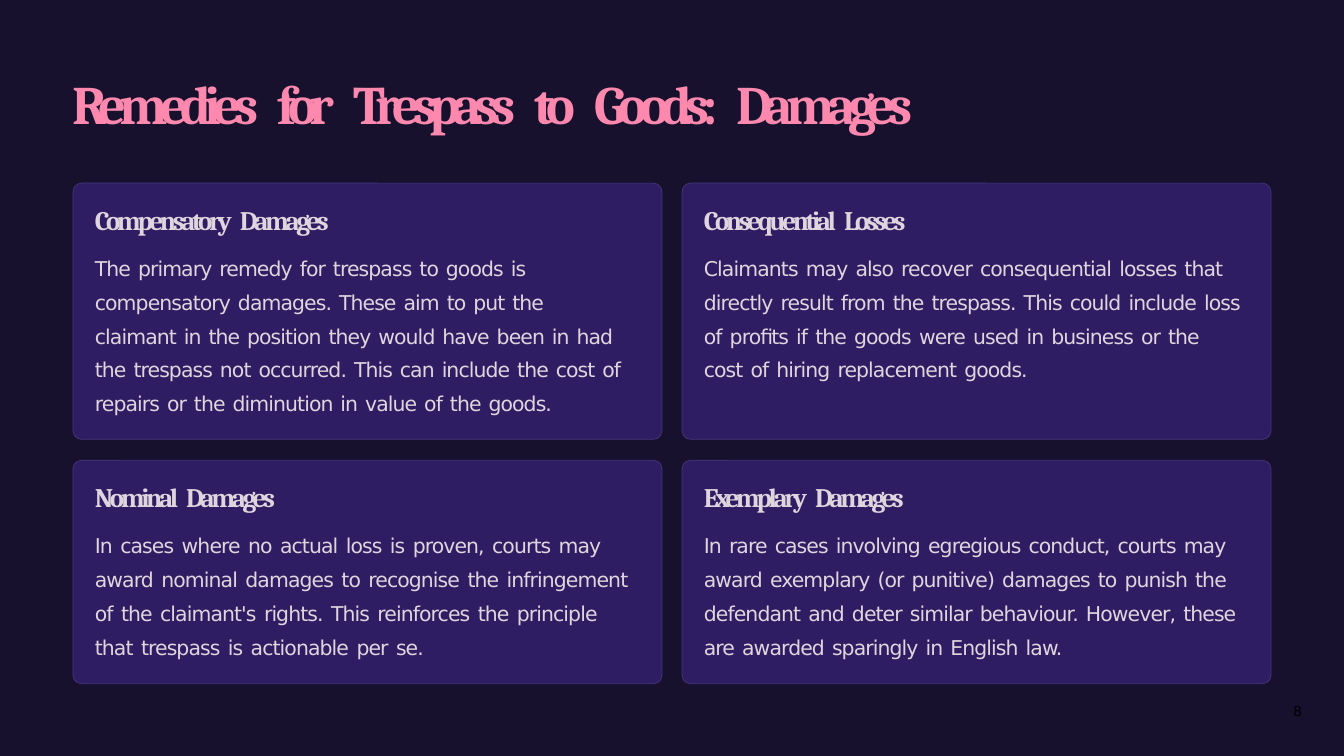
import dataclasses
import itertools

import pptx
import pptx.dml.color
import pptx.enum.shapes
import pptx.enum.text
import pptx.util

Inches = pptx.util.Inches
Pt = pptx.util.Pt
MSO_SHAPE = pptx.enum.shapes.MSO_SHAPE


@dataclasses.dataclass(frozen=True)
class Theme:
    background: str = "17112E"
    title: str = "FF89AE"
    card: str = "2E1D62"
    border: str = "47367B"
    text: str = "DFD5DE"
    number: str = "000000"
    serif: str = "Cambria"
    sans: str = "DejaVu Sans"
    title_size: float = 46.5
    heading_size: float = 23
    body_size: float = 17.5
    number_size: float = 12


THEME = Theme()

# Slide and card grid, in inches
SLIDE_WIDTH, SLIDE_HEIGHT = 16, 9
COLUMN_LEFTS = (0.87, 8.12)
ROWS = ((2.18, 3.05), (5.48, 2.66))  # top, height
CARD_WIDTH = 7.01
CORNER_RADIUS = 0.1
TEXT_WIDTH = 6.4

# Heading, body, letter spacing of the gaps between body words
CARDS = (
    ("Compensatory Damages",
     "The primary remedy for trespass to goods is compensatory damages. "
     "These aim to put the claimant in the position they would have been in "
     "had the trespass not occurred. This can include the cost of repairs or "
     "the diminution in value of the goods.", 0.4),
    ("Consequential Losses",
     "Claimants may also recover consequential losses that directly result "
     "from the trespass. This could include loss of profits if the goods were "
     "used in business or the cost of hiring replacement goods.", 0.5),
    ("Nominal Damages",
     "In cases where no actual loss is proven, courts may award nominal "
     "damages to recognise the infringement of the claimant's rights. This "
     "reinforces the principle that trespass is actionable per se.", 0.8),
    ("Exemplary Damages",
     "In rare cases involving egregious conduct, courts may award exemplary "
     "(or punitive) damages to punish the defendant and deter similar "
     "behaviour. However, these are awarded sparingly in English law.", 0.5),
)


def rgb(value):
    return pptx.dml.color.RGBColor.from_string(value)


def add_panel(slide, kind, left, top, width, height, fill):
    panel = slide.shapes.add_shape(
        kind, Inches(left), Inches(top), Inches(width), Inches(height))
    panel.shadow.inherit = False
    panel.fill.solid()
    panel.fill.fore_color.rgb = rgb(fill)
    panel.line.fill.background()
    return panel


def add_text_frame(slide, left, top, width, height):
    box = slide.shapes.add_textbox(
        Inches(left), Inches(top), Inches(width), Inches(height))
    frame = box.text_frame
    frame.word_wrap = True
    frame.margin_left = frame.margin_right = 0
    frame.margin_top = frame.margin_bottom = 0
    return frame


def write_text(paragraph, text, *, font, size, color, bold=False, spacing=0,
               gap_spacing=0, before=0, line_spacing=1.0, align="LEFT"):
    paragraph.alignment = pptx.enum.text.PP_ALIGN[align]
    paragraph.space_before = Pt(before)
    paragraph.line_spacing = line_spacing
    # Words are set tight, the gaps between them looser
    for is_gap, letters in itertools.groupby(text, str.isspace):
        run = paragraph.add_run()
        run.text = "".join(letters)
        run.font.name = font
        run.font.size = Pt(size)
        run.font.bold = bold
        run.font.color.rgb = rgb(color)
        # Letter spacing is stored in hundredths of a point
        points = gap_spacing if is_gap else spacing
        run._r.get_or_add_rPr().set("spc", str(round(points * 100)))


def add_title(slide, text):
    frame = add_text_frame(slide, 0.86, 0.84, 13.7, 1)
    write_text(frame.paragraphs[0], text, font=THEME.serif,
               size=THEME.title_size, color=THEME.title, bold=True,
               spacing=-6.2, gap_spacing=6, before=1.1)


def add_card(slide, left, top, height, heading, body, body_gap):
    # Panel
    panel = add_panel(slide, MSO_SHAPE.ROUNDED_RECTANGLE,
                      left, top, CARD_WIDTH, height, THEME.card)
    panel.adjustments[0] = CORNER_RADIUS / height
    panel.line.color.rgb = rgb(THEME.border)
    panel.line.width = Pt(0.6)

    # Heading and body
    frame = add_text_frame(
        slide, left + 0.26, top + 0.24, TEXT_WIDTH, height - 0.48)
    write_text(frame.paragraphs[0], heading, font=THEME.serif,
               size=THEME.heading_size, color=THEME.text, bold=True,
               spacing=-2.9, gap_spacing=1.7, before=1.1)
    write_text(frame.add_paragraph(), body, font=THEME.sans,
               size=THEME.body_size, color=THEME.text, spacing=-0.8,
               gap_spacing=body_gap, before=9.9, line_spacing=1.38)


def add_slide_number(slide, number):
    frame = add_text_frame(slide, 14.5, 8.36, 1, 0.25)
    write_text(frame.paragraphs[0], number, font=THEME.sans,
               size=THEME.number_size, color=THEME.number, align="RIGHT")


def main():
    presentation = pptx.Presentation()
    presentation.slide_width = Inches(SLIDE_WIDTH)
    presentation.slide_height = Inches(SLIDE_HEIGHT)
    slide = presentation.slides.add_slide(presentation.slide_layouts[6])

    # Backdrop and title
    add_panel(slide, MSO_SHAPE.RECTANGLE, 0, 0, SLIDE_WIDTH, SLIDE_HEIGHT,
              THEME.background)
    add_title(slide, "Remedies for Trespass to Goods: Damages")

    # Cards, row by row
    for index, card in enumerate(CARDS):
        row, column = divmod(index, len(COLUMN_LEFTS))
        top, height = ROWS[row]
        add_card(slide, COLUMN_LEFTS[column], top, height, *card)
    add_slide_number(slide, "8")

    presentation.save("out.pptx")


if __name__ == "__main__":
    main()
